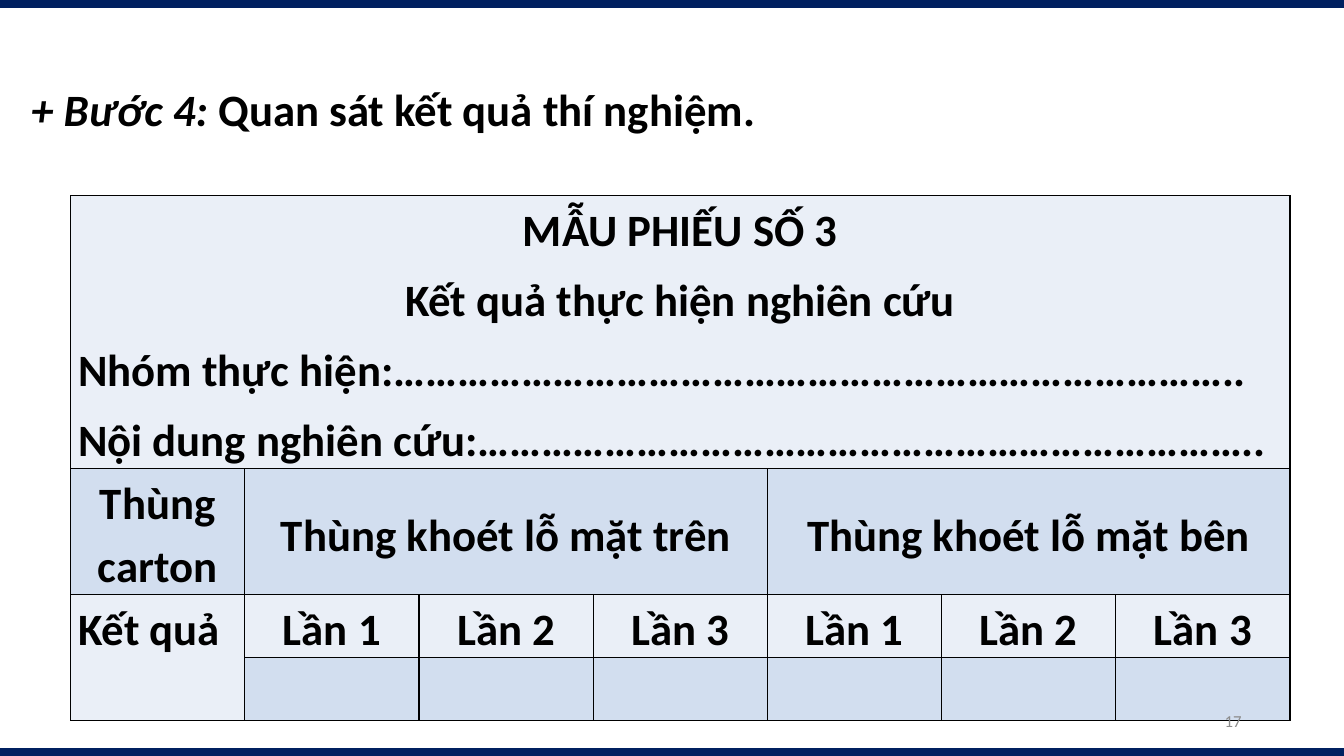
from lxml.etree import SubElement
from pptx import Presentation
from pptx.dml.color import RGBColor
from pptx.enum.shapes import MSO_CONNECTOR
from pptx.enum.text import MSO_ANCHOR, MSO_AUTO_SIZE, PP_ALIGN
from pptx.oxml.ns import qn
from pptx.util import Cm, Pt

COLORS = {"navy": "002060", "black": "000000", "grey": "8C8C8C",
          "light": "EAEFF7", "blue": "D2DEEF"}
WIDTH, HEIGHT = 33.87, 19.05
BAND_INSET = 0.1

TITLE_RUNS = [("+ Bước 4: ", True), ("Quan sát kết quả thí nghiệm.", False)]
FORM_HEADINGS = ["MẪU PHIẾU SỐ 3", "Kết quả thực hiện nghiên cứu"]
FORM_FIELDS = [
    "Nhóm thực hiện:……………………………………………………………………..",
    "Nội dung nghiên cứu:………………………………………………………………..",
]
BOX_LABEL, RESULT_LABEL = "Thùng carton", "Kết quả"
BOX_TYPES = ["Thùng khoét lỗ mặt trên", "Thùng khoét lỗ mặt bên"]
TRIALS = ["Lần 1", "Lần 2", "Lần 3"]

FORM_ROW, BOX_ROW, TRIAL_ROW, BLANK_ROW = range(4)
ROW_HEIGHTS = [6.88, 3.17, 1.58, 1.58]
ROW_FILLS = ["light", "blue", "light", "blue"]
COLUMNS = 1 + len(BOX_TYPES) * len(TRIALS)
COLUMN_WIDTH = 4.39


def rgb(name):
    return RGBColor.from_string(COLORS[name])


def assign(obj, values):
    for name, value in values.items():
        setattr(obj, name, value)


class SlideBuilder:
    font = {"name": "Calibri", "size": Pt(32), "bold": True}
    cell_paragraph = {"line_spacing": 1.15, "space_before": Pt(5)}
    cell_margins = {"margin_left": Cm(0.19), "margin_right": Cm(0.19),
                    "margin_top": 0, "margin_bottom": 0}

    def __init__(self, slide):
        self.slide = slide

    def run(self, p, text, color="black", **changes):
        r = p.add_run()
        r.text = text
        assign(r.font, {**self.font, **changes})
        r.font.color.rgb = rgb(color)

    def title(self, box, runs):
        """Place the title; runs are pairs of text and italic."""
        sp = self.slide.shapes.title
        assign(sp, dict(zip(("left", "top", "width", "height"), map(Cm, box))))
        tf = sp.text_frame
        assign(tf, {"word_wrap": False, "auto_size": MSO_AUTO_SIZE.NONE,
                    "vertical_anchor": MSO_ANCHOR.TOP})
        p = tf.paragraphs[0]
        p.alignment = PP_ALIGN.JUSTIFY
        for text, italic in runs:
            self.run(p, text, italic=italic)

    def page_number(self, box, number):
        tf = self.slide.shapes.add_textbox(*map(Cm, box)).text_frame
        assign(tf, {"word_wrap": True, "vertical_anchor": MSO_ANCHOR.MIDDLE})
        p = tf.paragraphs[0]
        p.alignment = PP_ALIGN.RIGHT
        self.run(p, number, "grey", size=Pt(12), bold=False)

    def band(self, y):
        """Draw a thick line across the full slide width."""
        line = self.slide.shapes.add_connector(
            MSO_CONNECTOR.STRAIGHT, 0, Cm(y), Cm(WIDTH), Cm(y))
        line.line.color.rgb = rgb("navy")
        line.line.width = Pt(6)
        SubElement(line._element.spPr, qn("a:effectLst"))

    def table(self, left, top):
        """Add the empty bordered grid with one fill per row."""
        table = self.slide.shapes.add_table(
            len(ROW_HEIGHTS), COLUMNS, Cm(left), Cm(top),
            Cm(COLUMN_WIDTH * COLUMNS), Cm(sum(ROW_HEIGHTS))).table
        for column in table.columns:
            column.width = Cm(COLUMN_WIDTH)
        for row, height, fill in zip(table.rows, ROW_HEIGHTS, ROW_FILLS):
            row.height = Cm(height)
            for cell in row.cells:
                assign(cell, self.cell_margins)
                self.borders(cell)
                cell.fill.solid()
                cell.fill.fore_color.rgb = rgb(fill)
                cell.text_frame.paragraphs[0].font.size = self.font["size"]
        return table

    def borders(self, cell):
        tc_pr = cell._tc.get_or_add_tcPr()
        for side in ("lnL", "lnR", "lnT", "lnB"):
            ln = SubElement(tc_pr, qn(f"a:{side}"), w=str(Pt(1)))
            fill = SubElement(ln, qn("a:solidFill"))
            SubElement(fill, qn("a:srgbClr"), val=COLORS["black"])

    def cell(self, cell, lines, align=PP_ALIGN.CENTER, anchor=MSO_ANCHOR.TOP):
        """Write lines into a cell, after any text it already holds."""
        cell.vertical_anchor = anchor
        tf = cell.text_frame
        for text in lines:
            p = tf.add_paragraph() if tf.text else tf.paragraphs[0]
            assign(p, {**self.cell_paragraph, "alignment": align})
            self.run(p, text)


def fill_form(s, table):
    """Merge and fill the form header, then one column group per box type."""
    form = table.cell(FORM_ROW, 0)
    form.merge(table.cell(FORM_ROW, COLUMNS - 1))
    s.cell(form, FORM_HEADINGS)
    s.cell(form, FORM_FIELDS, PP_ALIGN.JUSTIFY)

    s.cell(table.cell(BOX_ROW, 0), [BOX_LABEL], anchor=MSO_ANCHOR.MIDDLE)
    result = table.cell(TRIAL_ROW, 0)
    result.merge(table.cell(BLANK_ROW, 0))
    s.cell(result, [RESULT_LABEL], PP_ALIGN.JUSTIFY)

    for group, box_type in enumerate(BOX_TYPES):
        first = 1 + group * len(TRIALS)
        heading = table.cell(BOX_ROW, first)
        heading.merge(table.cell(BOX_ROW, first + len(TRIALS) - 1))
        s.cell(heading, [box_type], anchor=MSO_ANCHOR.MIDDLE)
        for col, trial in enumerate(TRIALS, first):
            s.cell(table.cell(TRIAL_ROW, col), [trial])


def main():
    prs = Presentation()
    prs.slide_width, prs.slide_height = Cm(WIDTH), Cm(HEIGHT)
    title_only = prs.slide_layouts[5]
    s = SlideBuilder(prs.slides.add_slide(title_only))

    for y in (BAND_INSET, HEIGHT - BAND_INSET):
        s.band(y)
    s.title((0.53, 1.93, 18.92, 1.63), TITLE_RUNS)
    fill_form(s, s.table(1.78, 4.93))
    s.page_number((23.92, 17.65, 7.62, 1.01), "17")
    prs.save("out.pptx")


if __name__ == "__main__":
    main()
